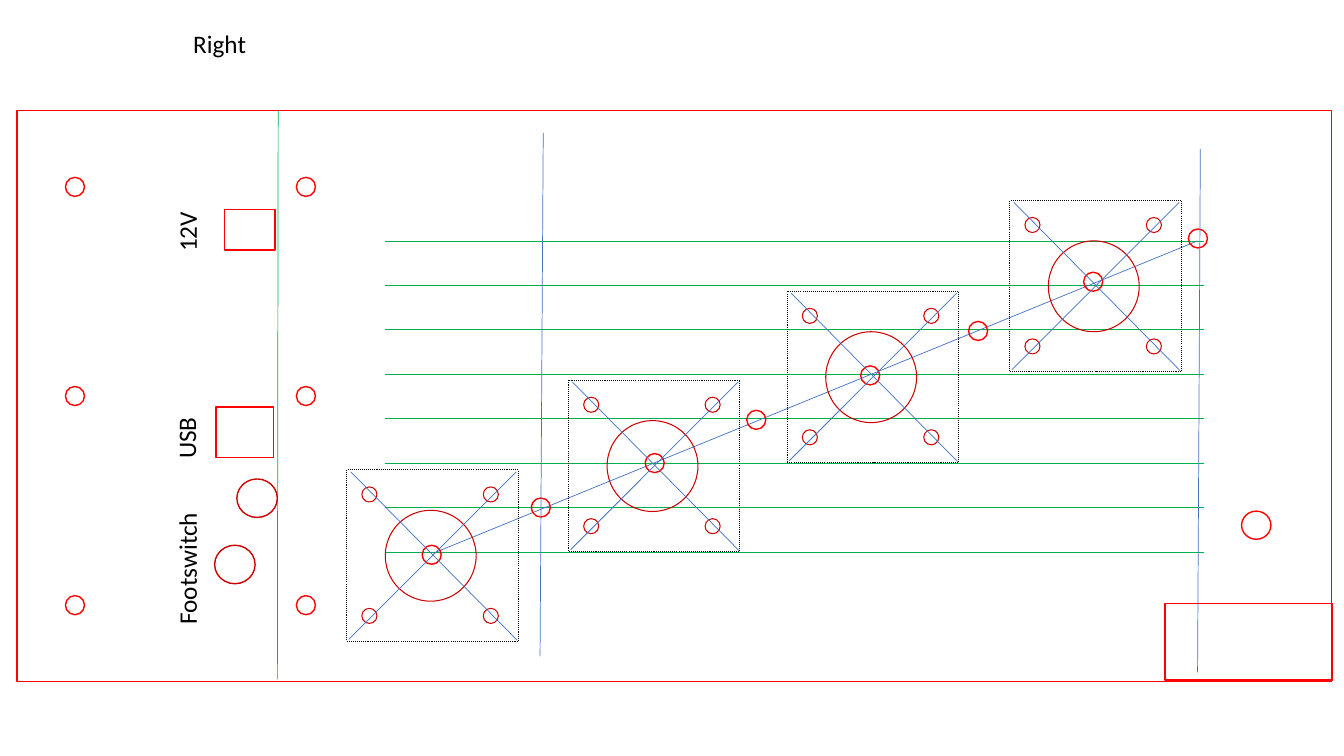
import pptx
import pptx.util
import pptx.dml.color
import pptx.enum.dml
import pptx.enum.shapes
import pptx.enum.text
import pptx.oxml

Cm = pptx.util.Cm
Pt = pptx.util.Pt
RGBColor = pptx.dml.color.RGBColor
Kind = pptx.enum.shapes.MSO_SHAPE

RED = RGBColor(0xFF, 0x00, 0x00)
DARK = RGBColor(0xCC, 0x00, 0x00)
GREEN = RGBColor(0x00, 0xB0, 0x50)
BLUE = RGBColor(0x44, 0x72, 0xC4)
BLACK = RGBColor(0x00, 0x00, 0x00)

HOLE = 0.48


class Panel:
    """Draws the parts of a drilled panel on one slide."""

    font = "Calibri"
    size = 18

    def __init__(self, slide):
        self.slide = slide
        self.shapes = slide.shapes

    def shape(self, kind, x, y, w, h, color=RED, width=1.0, dash=None):
        item = self.shapes.add_shape(kind, Cm(x), Cm(y), Cm(w), Cm(h))
        item.shadow.inherit = False
        item.fill.background()
        item.line.color.rgb = color
        item.line.width = Pt(width)
        if dash:
            item.line.dash_style = dash
        return item

    def rect(self, *box, **style):
        return self.shape(Kind.RECTANGLE, *box, **style)

    def oval(self, *box, **style):
        return self.shape(Kind.OVAL, *box, **style)

    def hole(self, x, y):
        return self.oval(x, y, HOLE, HOLE)

    def line(self, x1, y1, x2, y2, color=BLUE):
        item = self.shapes.add_connector(
            pptx.enum.shapes.MSO_CONNECTOR.STRAIGHT, Cm(x1), Cm(y1), Cm(x2), Cm(y2))
        item.line.color.rgb = color
        item.line.width = Pt(0.5)
        props = item._element.spPr
        props.append(pptx.oxml.parse_xml(
            '<a:effectLst xmlns:a="http://schemas.openxmlformats.org/drawingml/2006/main"/>'))
        return item

    def label(self, text, x, y, w, turn=0):
        box = self.shapes.add_textbox(Cm(x), Cm(y), Cm(w), Cm(1.02))
        box.rotation = turn
        frame = box.text_frame
        frame.word_wrap = False
        frame.auto_size = pptx.enum.text.MSO_AUTO_SIZE.SHAPE_TO_FIT_TEXT
        run = frame.paragraphs[0].add_run()
        run.text = text
        run.font.name = self.font
        run.font.size = Pt(self.size)
        run.font.color.rgb = BLACK

    def mount(self, x, y):
        self.shapes = self.slide.shapes.add_group_shape().shapes
        self.rect(x, y, 4.32, 4.32, color=BLACK, width=0.75,
                  dash=pptx.enum.dml.MSO_LINE.ROUND_DOT)
        self.oval(x + 0.97, y + 1.02, 2.29, 2.29, color=DARK, width=0.75)
        for row in range(2):
            for col in range(2):
                self.oval(x + 0.38 + 3.06 * col, y + 0.43 + 3.06 * row,
                          0.38, 0.38, color=DARK, width=0.75)
        self.line(x + 0.1, y + 0.05, x + 4.29, y + 4.29)
        self.line(x + 4.27, y + 0.05, x + 0.05, y + 4.27)
        self.shapes = self.slide.shapes


def main():
    deck = pptx.Presentation()
    deck.slide_width = Cm(33.87)
    deck.slide_height = Cm(19.05)
    panel = Panel(deck.slides.add_slide(deck.slide_layouts[6]))

    for row in range(8):
        y = 6.07 + 1.12 * row
        panel.line(30.35, y, 9.7, y, GREEN)
    panel.line(30.18, 6.07, 10.92, 13.94)
    for x, y in ((29.95, 5.77), (27.31, 6.86), (24.41, 8.1), (21.69, 9.22),
                 (18.82, 10.34), (16.26, 11.43), (13.39, 12.55), (10.64, 13.74)):
        panel.hole(x, y)
    panel.line(13.61, 16.54, 13.69, 3.35)
    panel.line(30.18, 16.94, 30.25, 3.76)

    for x, y in ((25.45, 5.05), (19.84, 7.34), (14.33, 9.58), (8.74, 11.84)):
        panel.mount(x, y)

    panel.rect(0.43, 2.79, 33.12, 14.38)
    panel.rect(29.36, 15.21, 4.22, 1.93)
    panel.line(6.99, 17.12, 7.01, 2.79, GREEN)
    for x in (1.65, 7.47):
        for row in range(3):
            panel.hole(x, 4.47 + 5.27 * row)

    panel.rect(5.44, 10.26, 1.45, 1.27)
    panel.rect(5.66, 5.28, 1.27, 1.02)
    for x, y in ((5.41, 13.74), (5.97, 12.07)):
        panel.oval(x, y, 1.02, 0.97, color=DARK)
    panel.oval(31.29, 12.88, 0.74, 0.71)

    panel.label("Right", 4.62, 0.58, 2.18)
    panel.label("USB", 3.78, 10.39, 1.83, 270)
    panel.label("Footswitch", 2.92, 13.69, 3.58, 270)
    panel.label("12V", 3.89, 5.26, 1.65, 270)

    deck.save("out.pptx")


if __name__ == "__main__":
    main()
